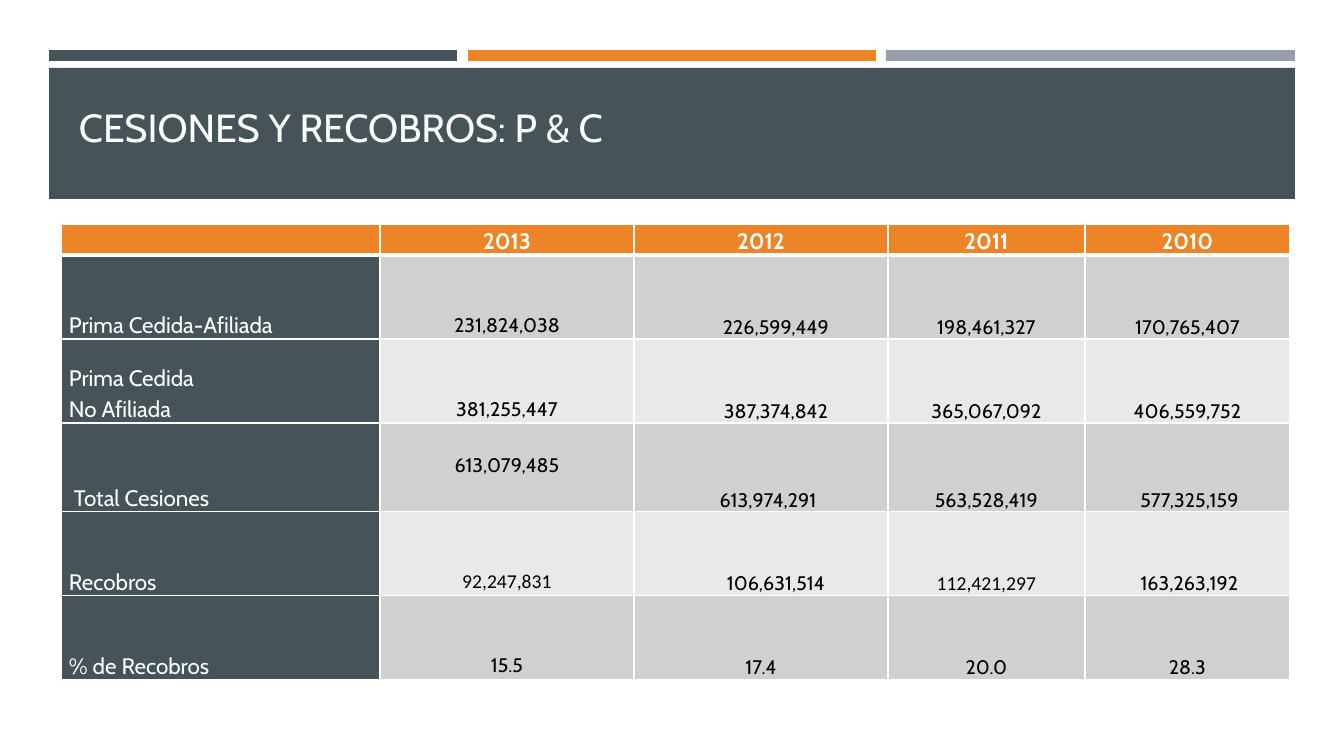
import pptx
import pptx.util
import pptx.dml.color
import pptx.enum.shapes
import pptx.enum.text
import pptx.oxml
import pptx.oxml.ns

PX = 914400 / 100.8
COLORS = {"slate": "465359", "orange": "ED8428", "gray": "969FA7", "white": "FFFFFF",
          "black": "000000", "band_dark": "CFD1D1", "band_light": "E9E9EA"}
TITLE = "CESIONES Y RECOBROS: P & C"
BLOCKS = [  # left, top, width, height, colour
    (49, 50, 408, 11, "slate"),
    (468, 50, 408, 11, "orange"),
    (886, 50, 409, 11, "gray"),
    (49, 68, 1246, 131, "slate"),
]
ROWS = [
    ("", "2013", "2012", "2011", "2010"),
    ("Prima Cedida-Afiliada", "231,824,038", "226,599,449", "198,461,327", "170,765,407"),
    ("Prima Cedida\nNo Afiliada", "381,255,447", "387,374,842", "365,067,092", "406,559,752"),
    ("Total Cesiones", "613,079,485", "613,974,291", "563,528,419", "577,325,159"),
    ("Recobros", "92,247,831", "106,631,514", "112,421,297", "163,263,192"),
    ("% de Recobros", "15.5", "17.4", "20.0", "28.3"),
]
TABLE_LEFT, TABLE_TOP = 61, 224
COL_WIDTHS = [319, 254, 254, 197, 205]
ROW_HEIGHTS = [31, 84, 84, 89, 84, 84]
INSET = 8
# Extra cell margins, keyed by (row, column)
LEFT_SHIFT = {(1, 2): 30, (2, 2): 30, (3, 0): 5, (3, 2): 14, (3, 4): 4, (4, 2): 30, (4, 4): 4}
BOTTOM_SHIFT = {(1, 1): 2, (2, 1): 2, (3, 1): 35, (4, 1): 2, (5, 1): 2}
CALIBRI_CELLS = {(4, 1), (4, 3)}


def px(n):
    return pptx.util.Emu(round(n * PX))


def rgb(name):
    return pptx.dml.color.RGBColor.from_string(COLORS[name])


def apply(obj, values):
    for name, value in values.items():
        setattr(obj, name, value)


def style_font(p, size, color, bold=False, name="Cabin"):
    for r in p.runs:
        apply(r.font, {"size": pptx.util.Pt(size), "bold": bold, "name": name})
        r.font.color.rgb = rgb(color)


def add_block(s, left, top, width, height, color):
    sp = s.shapes.add_shape(pptx.enum.shapes.MSO_SHAPE.RECTANGLE,
                            px(left), px(top), px(width), px(height))
    sp.shadow.inherit = False
    sp.fill.solid()
    sp.fill.fore_color.rgb = rgb(color)
    sp.line.fill.background()


def add_title(s):
    tf = s.shapes.add_textbox(px(69), px(77), px(1200), px(78)).text_frame
    apply(tf, {"word_wrap": True, "vertical_anchor": pptx.enum.text.MSO_ANCHOR.BOTTOM,
               "text": TITLE})
    style_font(tf.paragraphs[0], 28, "white")


def set_borders(cell, row):
    points = {"lnL": 1, "lnR": 1, "lnT": 3 if row == 1 else 1, "lnB": 3 if row == 0 else 1}
    tcPr = cell._tc.get_or_add_tcPr()
    for i, (tag, width) in enumerate(points.items()):
        tcPr.insert(i, pptx.oxml.parse_xml(
            f'<a:{tag} {pptx.oxml.ns.nsdecls("a")} w="{width * 12700}"><a:solidFill>'
            f'<a:srgbClr val="{COLORS["white"]}"/></a:solidFill></a:{tag}>'))


def fill_cell(cell, row, col, text):
    header, label = row == 0, col == 0
    band = "band_dark" if row % 2 else "band_light"
    apply(cell, {"text": text, "vertical_anchor": pptx.enum.text.MSO_ANCHOR.BOTTOM,
                 "margin_left": px(INSET + LEFT_SHIFT.get((row, col), 0)),
                 "margin_right": px(INSET), "margin_top": 0,
                 "margin_bottom": px(BOTTOM_SHIFT.get((row, col), 0))})
    cell.fill.solid()
    cell.fill.fore_color.rgb = rgb("orange" if header else "slate" if label else band)
    align = pptx.enum.text.PP_ALIGN
    for p in cell.text_frame.paragraphs:
        apply(p, {"alignment": align.LEFT if label else align.CENTER, "line_spacing": 1.15})
        style_font(p, 16 if header or label else 14, "white" if header or label else "black",
                   header, "Calibri" if (row, col) in CALIBRI_CELLS else "Cabin")
    set_borders(cell, row)


def add_figures(s):
    table = s.shapes.add_table(len(ROWS), len(COL_WIDTHS), px(TABLE_LEFT), px(TABLE_TOP),
                               px(sum(COL_WIDTHS)), px(sum(ROW_HEIGHTS))).table
    apply(table, {"first_row": False, "horz_banding": False})
    for column, width in zip(table.columns, COL_WIDTHS):
        column.width = px(width)
    for i, (height, texts) in enumerate(zip(ROW_HEIGHTS, ROWS)):
        table.rows[i].height = px(height)
        for j, text in enumerate(texts):
            fill_cell(table.cell(i, j), i, j, text)


def main():
    prs = pptx.Presentation()
    apply(prs, {"slide_width": px(1344), "slide_height": px(756)})
    s = prs.slides.add_slide(prs.slide_layouts[6])
    for block in BLOCKS:
        add_block(s, *block)
    add_title(s)
    add_figures(s)
    prs.save("out.pptx")


if __name__ == "__main__":
    main()
